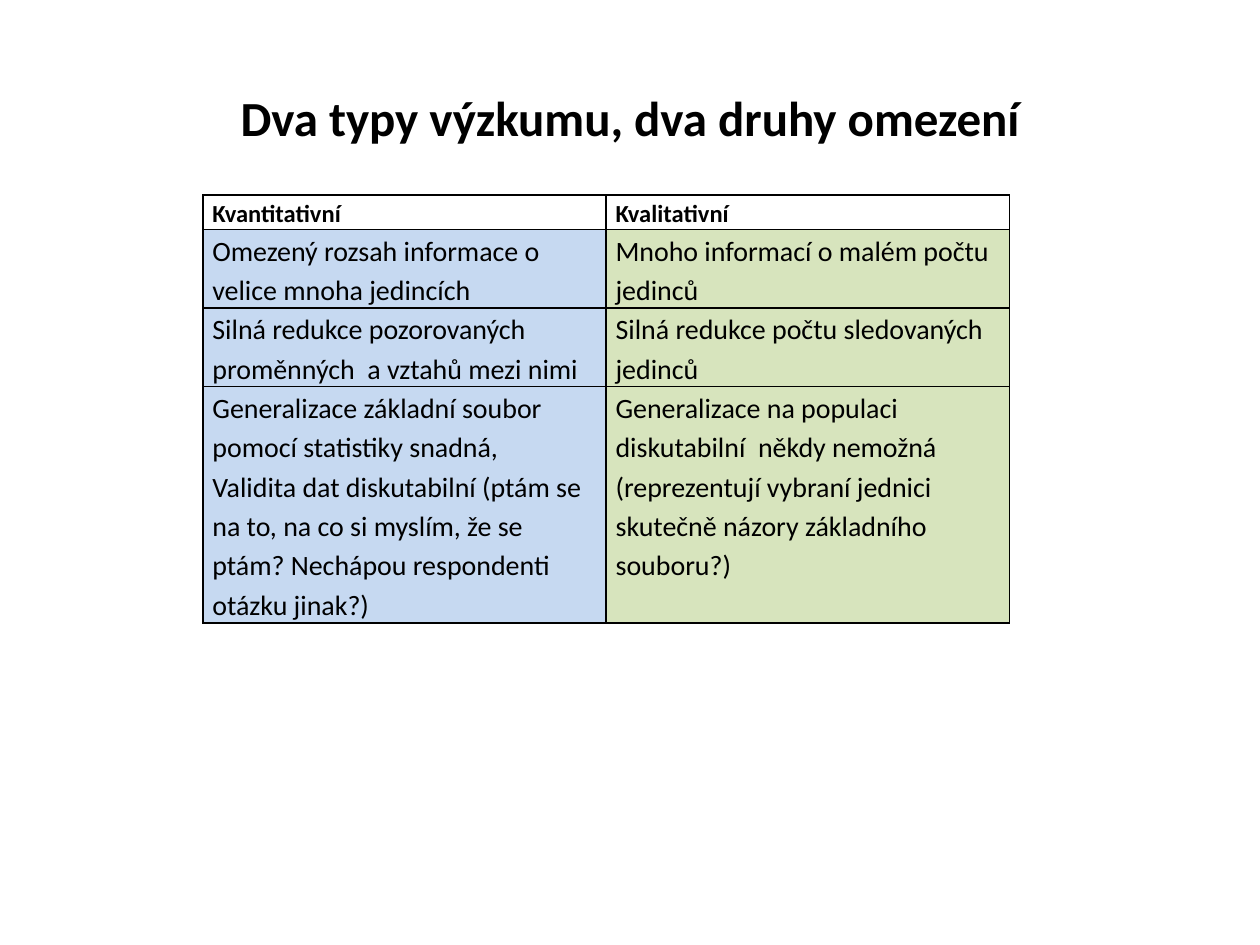
from dataclasses import dataclass

from lxml import etree
from pptx import Presentation
from pptx import util as u
from pptx.dml.color import RGBColor
from pptx.enum import text
from pptx.oxml import ns

FONT = "Calibri"
BLACK = "000000"
BLUE = "C6D9F1"
GREEN = "D7E4BD"


@dataclass
class Row:
    height: float
    left: list[str]
    right: list[str]
    header: bool = False


ROWS = [
    Row(19.6, ["Kvantitativní"], ["Kvalitativní"], header=True),
    Row(44.8, ["Omezený rozsah informace o velice mnoha jedincích"],
        ["Mnoho informací o malém počtu jedinců"]),
    Row(44.8, ["Silná redukce pozorovaných proměnných  a vztahů mezi nimi"],
        ["Silná redukce počtu sledovaných jedinců"]),
    Row(134.6, ["Generalizace základní soubor pomocí statistiky snadná,",
                "Validita dat diskutabilní (ptám se na to, na co si myslím, "
                "že se ptám? Nechápou respondenti otázku jinak?)"],
        ["Generalizace na populaci diskutabilní  někdy nemožná "
         "(reprezentují vybraní jednici skutečně názory základního souboru?)"]),
]


def color(value: str) -> RGBColor:
    return RGBColor.from_string(value)


def add_run(p, words: str, size: float, bold: bool) -> None:
    r = p.add_run()
    r.text = words
    r.font.name = FONT
    r.font.size = u.Pt(size)
    r.font.bold = bold
    r.font.color.rgb = color(BLACK)


def add_borders(cell, width: float) -> None:
    # Border lines come before the fill in the cell properties
    tc_pr = cell._tc.get_or_add_tcPr()
    for i, side in enumerate(("lnL", "lnR", "lnT", "lnB")):
        ln = etree.Element(ns.qn(f"a:{side}"), w=str(u.Pt(width)))
        fill = etree.SubElement(ln, ns.qn("a:solidFill"))
        etree.SubElement(fill, ns.qn("a:srgbClr"), val=BLACK)
        tc_pr.insert(i, ln)


def fill_cell(cell, paragraphs: list[str], header: bool, fill: str) -> None:
    cell.margin_left = cell.margin_right = u.Pt(5.4)
    cell.margin_top = cell.margin_bottom = 0
    if header:
        cell.fill.background()
    else:
        cell.fill.solid()
        cell.fill.fore_color.rgb = color(fill)
    add_borders(cell, 1)
    tf = cell.text_frame
    for i, words in enumerate(paragraphs):
        p = tf.add_paragraph() if i else tf.paragraphs[0]
        p.line_spacing = 1.15
        add_run(p, words, 14 if header else 16, header)


def add_comparison(s, rows: list[Row]) -> None:
    height = sum(row.height for row in rows)
    table = s.shapes.add_table(len(rows), 2, u.Pt(116), u.Pt(111.4),
                               u.Pt(460.8), u.Pt(height)).table
    table.first_row = table.horz_banding = False
    for i, row in enumerate(rows):
        table.rows[i].height = u.Pt(row.height)
        fill_cell(table.cell(i, 0), row.left, row.header, BLUE)
        fill_cell(table.cell(i, 1), row.right, row.header, GREEN)


def add_title(s, words: str) -> None:
    sp = s.shapes.add_textbox(u.Pt(36), u.Pt(21.6), u.Pt(648), u.Pt(90))
    tf = sp.text_frame
    tf.word_wrap = True
    tf.vertical_anchor = text.MSO_ANCHOR.MIDDLE
    p = tf.paragraphs[0]
    p.alignment = text.PP_ALIGN.CENTER
    add_run(p, words, 28, True)


def main() -> None:
    prs = Presentation()
    prs.slide_width, prs.slide_height = u.Pt(720), u.Pt(540)
    s = prs.slides.add_slide(prs.slide_layouts[6])

    # Comparison table
    add_comparison(s, ROWS)

    # Title
    add_title(s, "Dva typy výzkumu, dva druhy omezení")

    prs.save("out.pptx")


if __name__ == "__main__":
    main()
